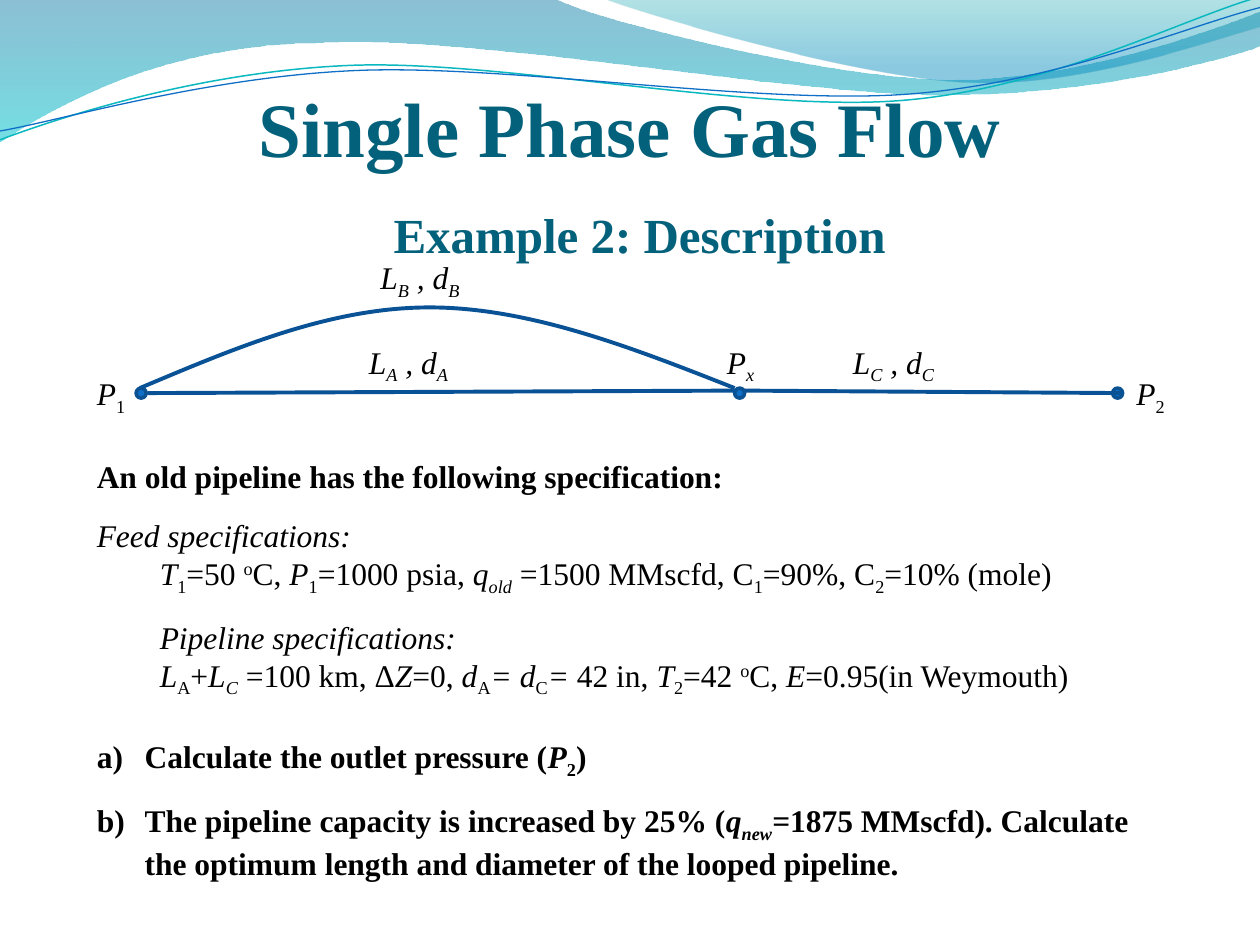
from lxml.etree import SubElement
from pptx import Presentation
from pptx.dml.color import RGBColor
from pptx.enum.shapes import MSO_CONNECTOR, MSO_SHAPE
from pptx.enum.text import PP_ALIGN
from pptx.oxml.ns import qn
from pptx.util import Inches, Pt

FONT = "Times New Roman"
COLORS = {
    "title": "04617B", "text": "000000", "pipe": "095295",
    "dot": "0F6FC6", "rim": "0B5292", "teal": "0AB8BF",
    "blue": "0F6FC6", "deep": "0074A1", "aqua": "00C6CF",
    "sea": "00A1A9", "sky": "008BBF",
}

# Curves: a start point, then straight steps (2 numbers) or Bezier steps (6).
BAND = [(0, -0.01), (4.4, -0.01), (4.76, 0.17, 6.64, 0.63, 7.58, 0.63),
        (8.53, 0.63, 9.58, 0.26, 10, 0.09), (10.01, 0.36),
        (9.83, 0.44, 8.7, 0.76, 7.46, 0.75),
        (6.22, 0.75, 3.82, 0.28, 2.57, 0.34),
        (1.29, 0.35, 0.46, 0.83, -0.01, 1.13), (0, -0.01)]
CREST = [(4.79, -0.01), (5.09, 0.11, 6.82, 0.62, 7.69, 0.65),
         (8.56, 0.69, 9.61, 0.32, 10, 0.21), (10, 0), (4.79, -0.01)]
UPPER = [(0, 1.11), (0.48, 0.93, 1.58, 0.57, 2.77, 0.52),
         (3.95, 0.47, 5.93, 0.89, 7.13, 0.8),
         (8.33, 0.71, 9.38, 0.15, 9.98, -0.02)]
LOWER = [(0, 1.04), (0.47, 0.96, 1.64, 0.61, 2.83, 0.56),
         (4.03, 0.51, 5.97, 0.83, 7.17, 0.75),
         (8.36, 0.67, 9.41, 0.21, 10, 0.06)]
LOOP = [(1.11, 3.08), (1.87, 2.76, 2.62, 2.44, 3.41, 2.44),
        (4.2, 2.44, 5.02, 2.76, 5.83, 3.08)]

# Runs are (text, style): b bold, i italic, - subscript, + superscript.
FEED = [("T", "i"), ("1", "-"), ("=50 ", ""), ("o", "+"), ("C, ", ""),
        ("P", "i"), ("1", "-"), ("=1000 psia, ", ""), ("q", "i"),
        ("old", "i-"), (" =1500 MMscfd, C", ""), ("1", "-"), ("=90%, C", ""),
        ("2", "-"), ("=10% (mole)", "")]
PIPE = [("L", "i"), ("A", "-"), ("+", ""), ("L", "i"), ("C", "i-"),
        (" =100 km, Δ", ""), ("Z", "i"), ("=0, ", ""), ("d", "i"), ("A", "-"),
        ("= d", "i"), ("C", "-"), ("= ", "i"), ("42 in, ", ""), ("T", "i"),
        ("2", "-"), ("=42 ", ""), ("o", "+"), ("C, ", ""), ("E", "i"),
        ("=0.95(in Weymouth)", "")]
TASK_A = [("Calculate the outlet pressure (", "b"), ("P", "bi"), ("2", "b-"),
          (")", "b")]
TASK_B = [("The pipeline capacity is increased by 25% (", "b"), ("q", "bi"),
          ("new", "bi-"), ("=", "bi"),
          ("1875 MMscfd). Calculate the optimum length and diameter "
           "of the looped pipeline.", "b")]
# Runs, space before in points, left indent in inches, list number.
BODY = [
    ([("An old pipeline has the following specification:", "b")], 0, 0, 0),
    ([("Feed specifications:", "i")], 12, 0, 0),
    (FEED, 0, 0.5, 0),
    ([("Pipeline specifications:", "i")], 12, 0.5, 0),
    (PIPE, 0, 0.5, 0),
    (TASK_A, 22, 0.38, 1),
    (TASK_B, 12, 0.38, 2),
]


def rgb(name):
    return RGBColor.from_string(COLORS[name])


def bend(shape, steps):
    """Turn the straight segments of Bezier steps into curves."""
    segs = list(shape._element.iter(qn("a:lnTo")))
    for seg, step in zip(segs, steps[1:]):
        if len(step) == 2:
            continue
        seg.tag_name = None
        curve = SubElement(seg.getparent(), qn("a:cubicBezTo"))
        for x, y in zip(step[::2], step[1::2]):
            SubElement(curve, qn("a:pt"), x=str(Inches(x) - shape.left),
                       y=str(Inches(y) - shape.top))
        seg.getparent().replace(seg, curve)


def add_path(slide, steps, close):
    pts = [(Inches(step[-2]), Inches(step[-1])) for step in steps]
    pen = slide.shapes.build_freeform(*pts[0])
    pen.add_line_segments(pts[1:], close=close)
    shape = pen.convert_to_shape()
    shape.shadow.inherit = False
    bend(shape, steps)
    return shape


def add_wave(slide, steps, stops):
    """Fill a closed path from top to bottom; stops are (place, colour, alpha)."""
    shape = add_path(slide, steps, True)
    shape.line.fill.background()
    shape.fill.gradient()
    shape.fill.gradient_angle = 270
    for stop, (place, name, _) in zip(shape.fill.gradient_stops, stops):
        stop.position = place
        stop.color.rgb = rgb(name)
    for node, (*_, alpha) in zip(shape._element.iter(qn("a:srgbClr")), stops):
        SubElement(node, qn("a:alpha"), val=str(alpha * 1000))


def add_curve(slide, steps, name, width):
    shape = add_path(slide, steps, False)
    shape.fill.background()
    shape.line.color.rgb = rgb(name)
    shape.line.width = Pt(width)


def add_pipe(slide, x1, y1, x2, y2):
    ends = [Inches(v) for v in (x1, y1, x2, y2)]
    pipe = slide.shapes.add_connector(MSO_CONNECTOR.STRAIGHT, *ends)
    pipe.line.color.rgb = rgb("pipe")
    pipe.line.width = Pt(2.25)
    SubElement(pipe._element.spPr, qn("a:effectLst"))


def add_dot(slide, x, y=3.08, size=0.08):
    dot = slide.shapes.add_shape(MSO_SHAPE.OVAL, Inches(x), Inches(y),
                                 Inches(size), Inches(size))
    dot.shadow.inherit = False
    dot.fill.solid()
    dot.fill.fore_color.rgb = rgb("dot")
    dot.line.color.rgb = rgb("rim")
    dot.line.width = Pt(2)


def add_box(slide, x, y, w, h, wrap=True):
    box = slide.shapes.add_textbox(Inches(x), Inches(y), Inches(w), Inches(h))
    box.text_frame.word_wrap = wrap
    return box.text_frame


def add_runs(para, runs, size=18, name="text"):
    for text, style in runs:
        run = para.add_run()
        run.text = text
        font = run.font
        font.name, font.size = FONT, Pt(size)
        font.color.rgb = rgb(name)
        font.bold, font.italic = "b" in style, "i" in style
        shift = -25 if "-" in style else 30 if "+" in style else 0
        if shift:
            run._r.get_or_add_rPr().set("baseline", str(shift * 1000))


def indent(para, left, number=0):
    """Indent a paragraph; a number makes it a lettered list item."""
    props = para._p.get_or_add_pPr()
    props.set("marL", str(Inches(left)))
    props.set("indent", str(-Inches(left) if number else 0))
    if number:
        SubElement(props, qn("a:buAutoNum"), type="alphaLcParenR",
                   startAt=str(number))


def add_title(slide):
    frame = add_box(slide, 0.5, 0.56, 9, 1.42)
    frame.margin_left = frame.margin_right = frame.margin_bottom = 0
    para = frame.paragraphs[0]
    para.alignment = PP_ALIGN.CENTER
    para.line_spacing = 1.04
    add_runs(para, [("Single Phase Gas Flow", "b")], 44, "title")
    para.add_line_break()
    add_runs(para, [(" ", "b")], 44, "title")
    add_runs(para, [("Example 2: Description", "b")], 28, "title")


def add_label(slide, x, y, w, runs):
    frame = add_box(slide, x, y, w, 0.4, wrap=False)
    add_runs(frame.paragraphs[0], runs)


def add_body(slide):
    frame = add_box(slide, 0.67, 3.58, 8.67, 3.33)
    for row, (runs, gap, left, number) in enumerate(BODY):
        para = frame.add_paragraph() if row else frame.paragraphs[0]
        para.space_before = Pt(gap)
        indent(para, left, number)
        add_runs(para, runs)


def main():
    deck = Presentation()
    deck.slide_width, deck.slide_height = Inches(10), Inches(7.5)
    slide = deck.slides.add_slide(deck.slide_layouts[6])
    add_wave(slide, BAND, [(0, "deep", 45), (1, "aqua", 55)])
    add_wave(slide, CREST, [(0, "sea", 30), (0.8, "sky", 45)])
    add_curve(slide, UPPER, "teal", 0.85)
    add_curve(slide, LOWER, "blue", 0.75)
    add_title(slide)
    for x in (1.08, 5.83, 8.83):
        add_dot(slide, x)
    add_pipe(slide, 1.17, 3.12, 5.85, 3.1)
    add_pipe(slide, 5.9, 3.1, 8.92, 3.12)
    add_curve(slide, LOOP, "pipe", 2.25)
    for x, y, key, style in ((0.67, 2.92, "1", "-"), (5.67, 2.67, "x", "i-"),
                             (8.92, 2.92, "2", "-")):
        add_label(slide, x, y, 0.44, [("P", "i"), (key, style)])
    for x, y, key in ((2.83, 2.67, "A"), (2.92, 2, "B"), (6.67, 2.67, "C")):
        add_label(slide, x, y, 0.93, [("L", "i"), (key, "i-"),
                                      (" , d", "i"), (key, "i-")])
    add_body(slide)
    deck.save("out.pptx")


if __name__ == "__main__":
    main()
